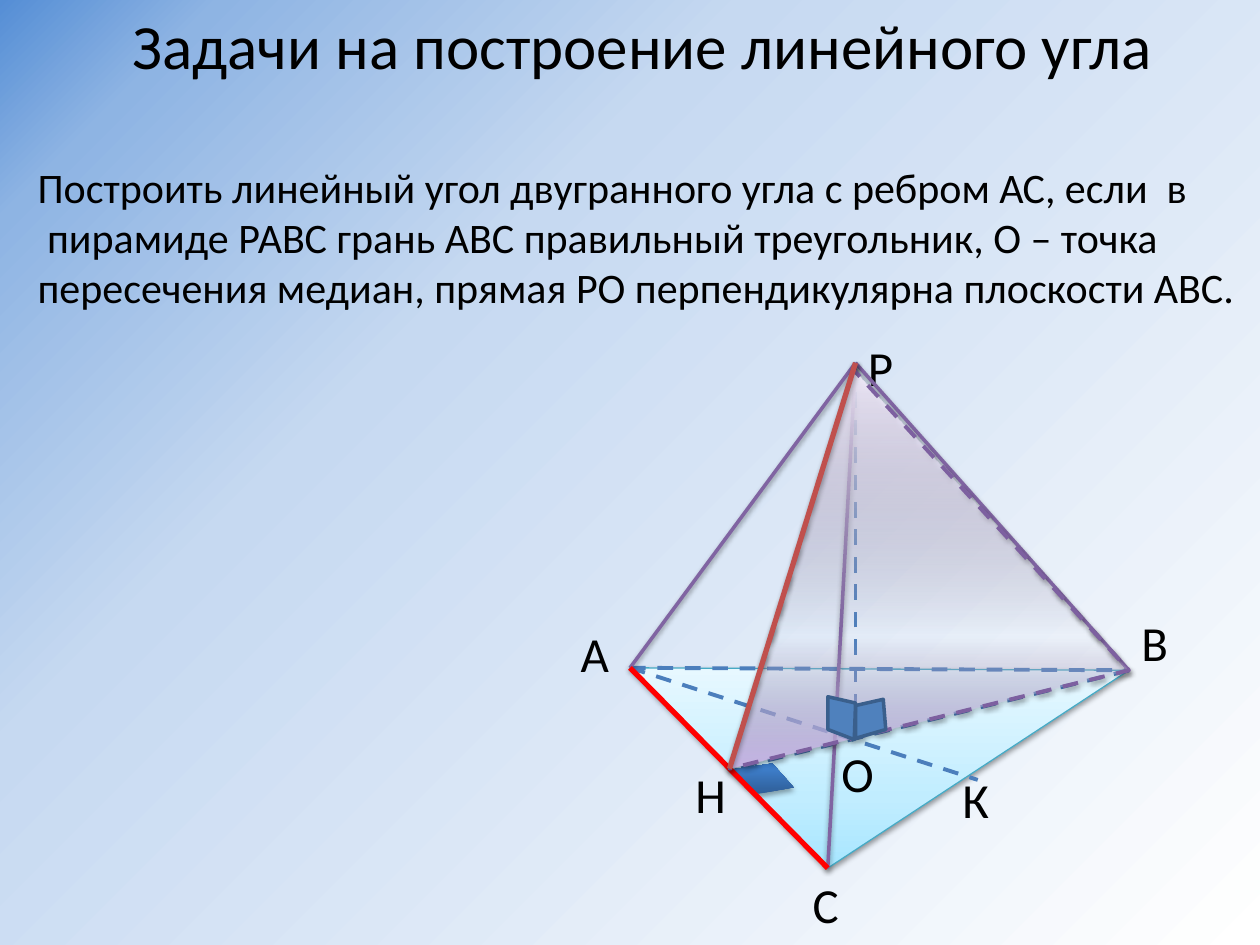
from dataclasses import dataclass
from typing import Optional

from lxml import etree
from pptx import Presentation
from pptx.dml.color import RGBColor
from pptx.enum.dml import MSO_LINE
from pptx.enum.shapes import MSO_CONNECTOR
from pptx.enum.text import MSO_ANCHOR, MSO_AUTO_SIZE, PP_ALIGN
from pptx.oxml.ns import qn
from pptx.util import Inches, Pt

DASH = MSO_LINE.DASH
STRAIGHT = MSO_CONNECTOR.STRAIGHT
LEFT, CENTER = PP_ALIGN.LEFT, PP_ALIGN.CENTER
TOP = MSO_ANCHOR.TOP
FIT = MSO_AUTO_SIZE.SHAPE_TO_FIT_TEXT

FONT = "Calibri"
BLUE, PURPLE, RED, BRICK = "4B7EBC", "8064A2", "FF0000", "C0504D"
SOFT, STRONG = (38, 1.6), (35, 1.8)

Point = tuple[float, float]
A, B, C = (5, 5.3), (8.96, 5.32), (6.57, 6.89)
H, O, P = (5.79, 6.1), (6.79, 5.85), (6.79, 2.88)


@dataclass
class Stop:
    position: int
    color: str
    opacity: int = 100


@dataclass
class Segment:
    start: Point
    end: Point
    color: str = BLUE
    width: float = 2.25
    dashed: bool = True
    shadow: Optional[tuple] = None


@dataclass
class Polygon:
    points: list[Point]
    fill: str | list[Stop]
    line: Optional[str] = None
    width: float = 2
    dashed: bool = False
    shadow: Optional[tuple] = None


@dataclass
class Label:
    text: str
    left: float
    top: float
    width: float = 0.43


def rgb(color: str) -> RGBColor:
    return RGBColor.from_string(color)


def add_node(parent, tag: str, **attributes):
    return etree.SubElement(parent, qn(tag), {key: str(value) for key, value in attributes.items()})


def add_color(parent, color: str, opacity: int) -> None:
    node = add_node(parent, "a:srgbClr", val=color)
    if opacity < 100:
        add_node(node, "a:alpha", val=opacity * 1000)


def set_gradient(fill, properties, stops: list[Stop], angle: Optional[int] = None) -> None:
    fill.solid()
    gradient = etree.Element(qn("a:gradFill"), rotWithShape="1")
    stop_list = add_node(gradient, "a:gsLst")
    for stop in stops:
        node = add_node(stop_list, "a:gs", pos=stop.position * 1000)
        add_color(node, stop.color, stop.opacity)
    if angle is None:
        path = add_node(gradient, "a:path", path="circle")
        add_node(path, "a:fillToRect", r=100000, b=100000)
    else:
        add_node(gradient, "a:lin", ang=angle * 60000, scaled=0)
    properties.replace(properties.find(qn("a:solidFill")), gradient)


def set_line(shape, color: str, width: float, dashed: bool) -> None:
    shape.line.color.rgb = rgb(color)
    shape.line.width = Pt(width)
    if dashed:
        shape.line.dash_style = DASH


def set_shadow(shape, shadow: Optional[tuple]) -> None:
    effects = add_node(shape._element.spPr, "a:effectLst")
    if shadow:
        opacity, distance = shadow
        outer = add_node(effects, "a:outerShdw", blurRad=Pt(3.1), dist=Pt(distance),
                         dir=5400000, rotWithShape=0)
        add_color(outer, "000000", opacity)


def draw_segment(page, segment: Segment) -> None:
    ends = [Inches(value) for value in segment.start + segment.end]
    line = page.shapes.add_connector(STRAIGHT, *ends)
    set_line(line, segment.color, segment.width, segment.dashed)
    set_shadow(line, segment.shadow)


def draw_polygon(page, polygon: Polygon) -> None:
    points = [(Inches(x), Inches(y)) for x, y in polygon.points]
    builder = page.shapes.build_freeform(*points[0])
    builder.add_line_segments(points[1:], close=True)
    shape = builder.convert_to_shape()
    if isinstance(polygon.fill, str):
        shape.fill.solid()
        shape.fill.fore_color.rgb = rgb(polygon.fill)
    else:
        set_gradient(shape.fill, shape._element.spPr, polygon.fill, 270)
    if polygon.line:
        set_line(shape, polygon.line, polygon.width, polygon.dashed)
    else:
        shape.line.fill.background()
    set_shadow(shape, polygon.shadow)


def write_text(box, lines: list[str], *, size: int, align=LEFT) -> None:
    frame = box.text_frame
    frame.word_wrap = False
    frame.auto_size = FIT
    frame.vertical_anchor = TOP
    for index, text in enumerate(lines):
        para = frame.add_paragraph() if index else frame.paragraphs[0]
        para.alignment = align
        span = para.add_run()
        span.text = text
        span.font.size = Pt(size)
        span.font.name = FONT
        span.font.color.rgb = rgb("000000")


def add_text(page, lines: list[str], place: tuple, *, size: int) -> None:
    box = page.shapes.add_textbox(*map(Inches, place))
    write_text(box, lines, size=size)


def draw_label(page, label: Label) -> None:
    add_text(page, [label.text], (label.left, label.top, label.width, 0.57), size=28)


SKY = [Stop(0, "558ED5"), Stop(10, "8EB4E3"), Stop(34, "C6D9F1"), Stop(100, "FFFFFF")]
BASE = [Stop(0, "A7E6FF"), Stop(35, "C1EDFF"), Stop(100, "E7F8FF")]
MARK = [Stop(0, "2F5F99"), Stop(80, "3D7CC7"), Stop(100, "3A7CCB")]
SECTION = [Stop(0, "C9B5E8", 95), Stop(33, "D8CBEE", 0), Stop(100, "F0EAF9")]

TASK = [
    "Построить линейный угол двугранного угла с ребром АС, если  в",
    " пирамиде РАВС грань АВС правильный треугольник, О – точка",
    "пересечения медиан, прямая РО перпендикулярна плоскости АВС.",
]
LABELS = [
    Label("А", 4.51, 4.9), Label("В", 8.96, 4.81), Label("С", 6.35, 6.89, 0.41),
    Label("К", 7.54, 6.06), Label("Н", 5.42, 6.02, 0.45),
    Label("О", 6.58, 5.85, 0.46), Label("Р", 6.79, 2.63, 0.41),
]
MEDIANS = [Segment(A, (7.76, 6.19)), Segment(B, (5.87, 6.09)), Segment(O, P)]
EDGES = [Segment(P, vertex, PURPLE, 2, False, SOFT) for vertex in (B, C, A)]
RIGHT_ANGLES = [
    Polygon([(6.79, 5.86), (6.79, 5.6), (7.01, 5.55), (7.03, 5.79)], "4F81BD", "3A5F8C"),
    Polygon([(6.78, 5.87), (6.57, 5.79), (6.57, 5.53), (6.79, 5.58)], "4F81BD", "3A5F8C"),
]


def main() -> None:
    deck = Presentation()
    deck.slide_width, deck.slide_height = Inches(10), Inches(7.5)
    page = deck.slides.add_slide(deck.slide_layouts[5])
    fill = page.background.fill
    fill.solid()
    set_gradient(fill, page._element.find(".//" + qn("p:bgPr")), SKY)

    title = page.shapes.title
    title.left, title.top, title.width, title.height = map(Inches, (0.91, 0, 8.38, 0.71))
    write_text(title, ["Задачи на построение линейного угла"], size=36, align=CENTER)

    draw_polygon(page, Polygon([A, B, C], BASE, "46AAC5", 0.75, shadow=SOFT))
    draw_segment(page, Segment(A, B))
    add_text(page, TASK, (0.2, 1.23, 9.71, 1.31), size=24)
    for median in MEDIANS:
        draw_segment(page, median)
    for label in LABELS:
        draw_label(page, label)
    for edge in EDGES:
        draw_segment(page, edge)
    draw_polygon(page, Polygon([(5.79, 6.11), (6.13, 6.06), (6.3, 6.25), (6.02, 6.3)],
                               MARK, shadow=STRONG))
    draw_segment(page, Segment(A, C, RED, 3, False))
    draw_polygon(page, Polygon([P, H, B, (6.77, 2.93)], SECTION, "7D60A0", 2.25, True, SOFT))
    draw_segment(page, Segment(P, H, BRICK, 3, False, STRONG))
    for mark in RIGHT_ANGLES:
        draw_polygon(page, mark)
    deck.save("out.pptx")


if __name__ == "__main__":
    main()
